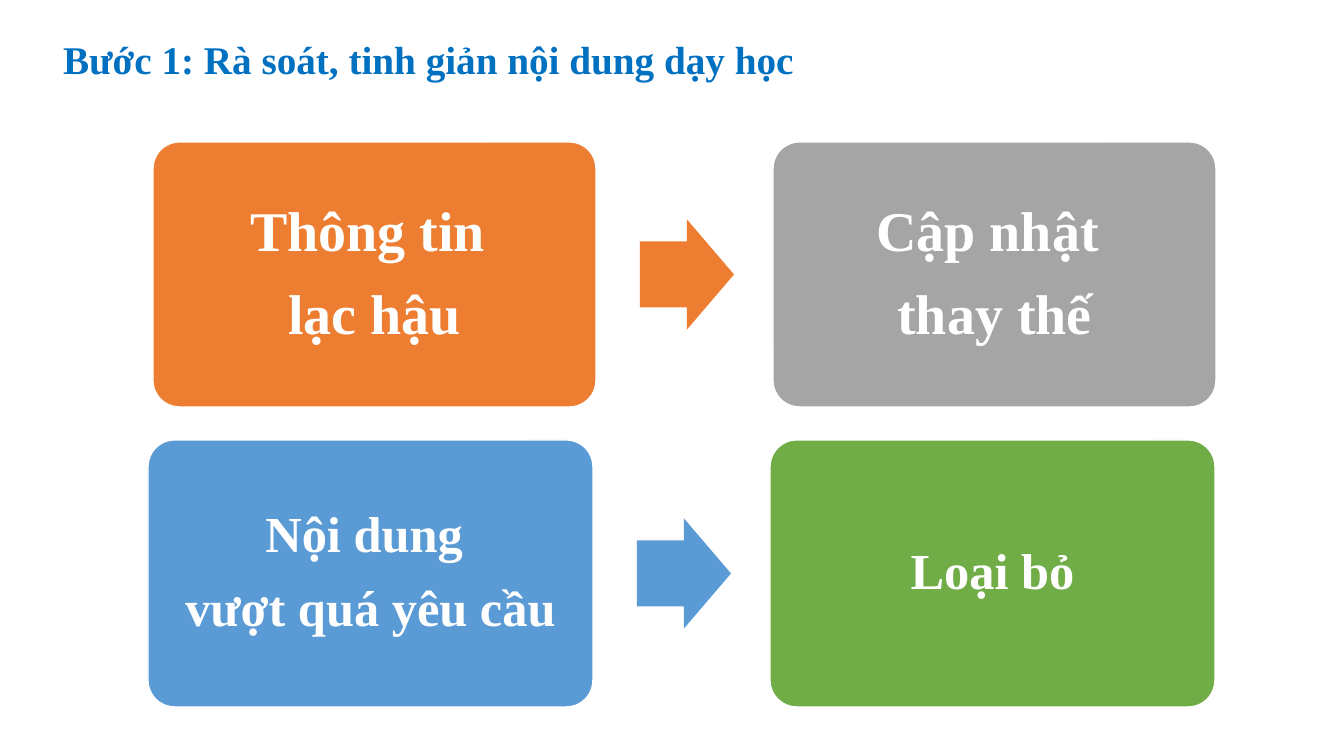
from pptx import Presentation
from pptx.dml.color import RGBColor
from pptx.enum.shapes import MSO_SHAPE
from pptx.enum.text import MSO_ANCHOR, MSO_AUTO_SIZE, PP_ALIGN
from pptx.util import Pt

ROUNDED = MSO_SHAPE.ROUNDED_RECTANGLE
ARROW = MSO_SHAPE.RIGHT_ARROW
TOP, MIDDLE = MSO_ANCHOR.TOP, MSO_ANCHOR.MIDDLE
LEFT, CENTER = PP_ALIGN.LEFT, PP_ALIGN.CENTER
NO_AUTOFIT = MSO_AUTO_SIZE.NONE

EMU_PER_PX = 914400 / 100.8
FONT = "Times New Roman"
TITLE_ONLY = 5
COLORS = {
    "title": "0070C0",
    "white": "FFFFFF",
    "orange": "ED7D31",
    "gray": "A5A5A5",
    "blue": "5B9BD5",
    "green": "70AD47",
}
CARD_GAP = 177
ARROW_GAP = 44
ARROW_WIDTH, ARROW_HEIGHT = 94, 110


def px(length):
    return round(length * EMU_PER_PX)


def color(name):
    return RGBColor.from_string(COLORS[name])


def format_paragraph(paragraph, size, color_name, alignment, line_spacing, space_after):
    paragraph.alignment = alignment
    paragraph.line_spacing = line_spacing
    paragraph.space_before = Pt(0)
    paragraph.space_after = Pt(space_after)
    for run in paragraph.runs:
        run.font.name = FONT
        run.font.size = Pt(size)
        run.font.bold = True
        run.font.color.rgb = color(color_name)


def add_title(slide, text, left, top, width, height):
    title = slide.shapes.title
    title.left, title.top = px(left), px(top)
    title.width, title.height = px(width), px(height)
    frame = title.text_frame
    frame.text = text
    frame.word_wrap = True
    frame.auto_size = NO_AUTOFIT
    frame.vertical_anchor = TOP
    format_paragraph(frame.paragraphs[0], 28, "title", LEFT, 1.5, 0)


def add_filled_shape(slide, kind, fill, left, top, width, height):
    shape = slide.shapes.add_shape(kind, px(left), px(top), px(width), px(height))
    shape.shadow.inherit = False
    shape.fill.solid()
    shape.fill.fore_color.rgb = color(fill)
    return shape


def add_card(slide, text, fill, size, inset, left, top, width, height):
    card = add_filled_shape(slide, ROUNDED, fill, left, top, width, height)
    card.adjustments[0] = 0.1
    card.line.color.rgb = color("white")
    card.line.width = Pt(1)
    frame = card.text_frame
    frame.word_wrap = True
    frame.vertical_anchor = MIDDLE
    frame.margin_left = frame.margin_right = px(inset)
    frame.margin_top = frame.margin_bottom = px(inset)
    frame.text = text
    for paragraph in frame.paragraphs:
        format_paragraph(paragraph, size, "white", CENTER, 0.9, round(size * 0.4))


def add_arrow(slide, fill, left, top):
    arrow = add_filled_shape(slide, ARROW, fill, left, top, ARROW_WIDTH, ARROW_HEIGHT)
    arrow.adjustments[0] = 0.6
    arrow.adjustments[1] = 0.5
    arrow.line.fill.background()


def add_step(slide, problem, action, fills, size, inset, left, top, width, height):
    add_card(slide, problem, fills[0], size, inset, left, top, width, height)
    add_arrow(slide, fills[0], left + width + ARROW_GAP, top + (height - ARROW_HEIGHT) / 2)
    add_card(slide, action, fills[1], size, inset, left + width + CARD_GAP, top, width, height)


def main():
    presentation = Presentation()
    presentation.slide_width, presentation.slide_height = px(1344), px(756)
    slide = presentation.slides.add_slide(presentation.slide_layouts[TITLE_ONLY])
    add_title(slide, "Bước 1: Rà soát, tinh giản nội dung dạy học", 53, 7, 1173, 84)
    add_step(slide, "Thông tin \nlạc hậu", "Cập nhật \nthay thế",
             ("orange", "gray"), 40, 22, 153, 142, 443, 265)
    add_step(slide, "Nội dung \nvượt quá yêu cầu", "Loại bỏ",
             ("blue", "green"), 36, 15, 148, 440, 445, 267)
    presentation.save("out.pptx")


if __name__ == "__main__":
    main()
